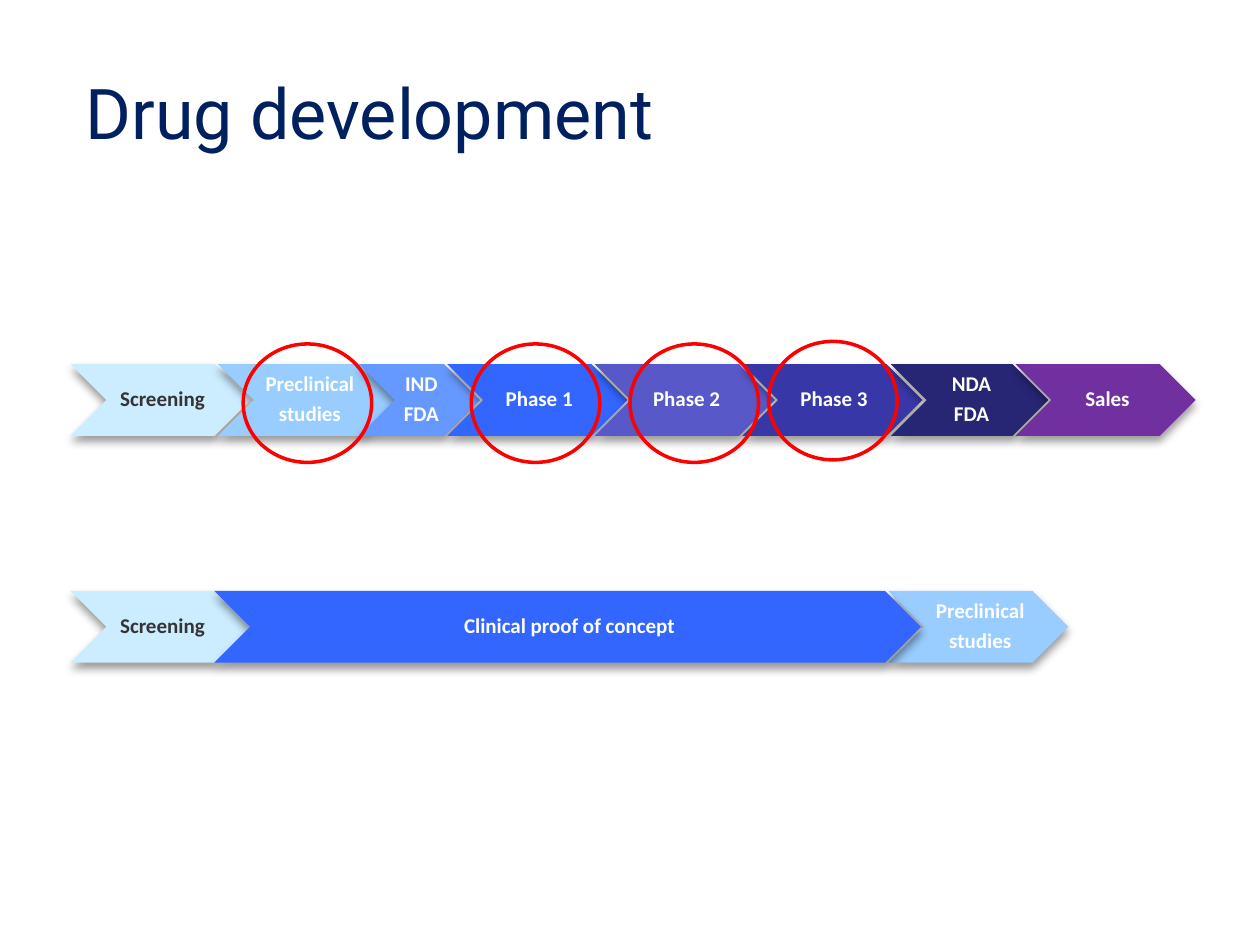
from dataclasses import dataclass

from lxml.etree import SubElement
from pptx import Presentation
from pptx.dml.color import RGBColor
from pptx.enum.shapes import MSO_SHAPE
from pptx.enum.text import MSO_ANCHOR, MSO_AUTO_SIZE, PP_ALIGN
from pptx.oxml.ns import qn
from pptx.shapes.autoshape import Shape
from pptx.slide import Slide
from pptx.util import Inches, Pt

COLORS = {
    "title": "002060", "dark": "343434", "white": "FFFFFF", "ring": "FF0000",
    "ice": "CCECFF", "sky": "99CCFF", "azure": "6699FF", "blue": "3366FF",
    "violet": "5858C8", "indigo": "3737A7", "navy": "262674",
    "purple": "7030A0", "shadow": "000000",
}
HEIGHT = 0.57


@dataclass
class Step:
    left: float
    lines: tuple[str, ...]
    fill: str
    width: float = 1.43
    ink: str = "white"


@dataclass
class Ring:
    left: float
    top: float = 2.73


@dataclass
class Row:
    top: float
    steps: tuple[Step, ...]


ROWS = (
    Row(2.89, (
        Step(0.56, ("Screening",), "ice", ink="dark"),
        Step(1.73, ("Preclinical", "studies"), "sky"),
        Step(2.85, ("IND", "FDA"), "azure", 0.96),
        Step(3.55, ("Phase 1",), "blue"),
        Step(4.72, ("Phase 2",), "violet"),
        Step(5.89, ("Phase 3",), "indigo"),
        Step(7.07, ("NDA", "FDA"), "navy", 1.25),
        Step(8.06, ("Sales",), "purple"),
    )),
    Row(4.69, (
        Step(0.56, ("Screening",), "ice", ink="dark"),
        Step(7.05, ("Preclinical", "studies"), "sky"),
        Step(1.7, ("Clinical proof of concept",), "blue", 5.61),
    )),
)
RINGS = (Ring(1.93), Ring(3.74), Ring(5), Ring(6.1, 2.71))


def color(name: str) -> RGBColor:
    return RGBColor.from_string(COLORS[name])


def add_title(slide: Slide, text: str) -> None:
    title = slide.shapes.title
    title.left, title.top = Inches(0.58), Inches(0.5)
    title.width, title.height = Inches(8.83), Inches(1.18)
    frame = title.text_frame
    frame.auto_size = MSO_AUTO_SIZE.NONE
    frame.vertical_anchor = MSO_ANCHOR.TOP
    para = frame.paragraphs[0]
    para.alignment = PP_ALIGN.LEFT
    run = para.add_run()
    run.text = text
    run.font.name = "Roboto"
    run.font.size = Pt(40)
    run.font.color.rgb = color("title")


def add_shadow(shape: Shape) -> None:
    shape.shadow.inherit = False
    effects = shape._element.spPr.find(qn("a:effectLst"))
    outer = SubElement(effects, qn("a:outerShdw"), blurRad=str(Pt(5.2)),
                       dist=str(Pt(3)), dir="5400000", rotWithShape="0")
    tone = SubElement(outer, qn("a:srgbClr"), val=COLORS["shadow"])
    SubElement(tone, qn("a:alpha"), val="40000")


def add_step(slide: Slide, step: Step, top: float) -> None:
    shape = slide.shapes.add_shape(
        MSO_SHAPE.CHEVRON, Inches(step.left), Inches(top),
        Inches(step.width), Inches(HEIGHT))
    shape.fill.solid()
    shape.fill.fore_color.rgb = color(step.fill)
    shape.line.fill.background()
    add_shadow(shape)
    frame = shape.text_frame
    frame.word_wrap = True
    frame.vertical_anchor = MSO_ANCHOR.MIDDLE
    frame.margin_left = Inches(0.05)
    frame.margin_right = frame.margin_top = frame.margin_bottom = Inches(0.02)
    for index, line in enumerate(step.lines):
        para = frame.add_paragraph() if index else frame.paragraphs[0]
        para.alignment = PP_ALIGN.CENTER
        para.line_spacing = 0.9
        para.space_after = Pt(4.2)
        run = para.add_run()
        run.text = line
        run.font.name = "Calibri"
        run.font.size = Pt(12)
        run.font.bold = True
        run.font.color.rgb = color(step.ink)


def add_ring(slide: Slide, ring: Ring) -> None:
    shape = slide.shapes.add_shape(
        MSO_SHAPE.OVAL, Inches(ring.left), Inches(ring.top),
        Inches(1.02), Inches(0.94))
    shape.shadow.inherit = False
    shape.fill.background()
    shape.line.color.rgb = color("ring")
    shape.line.width = Pt(2)


def main() -> None:
    deck = Presentation()
    deck.slide_width, deck.slide_height = Inches(10), Inches(7.5)
    slide = deck.slides.add_slide(deck.slide_layouts[5])
    add_title(slide, "Drug development")
    for row in ROWS:
        for step in row.steps:
            add_step(slide, step, row.top)
    for ring in RINGS:
        add_ring(slide, ring)
    deck.save("out.pptx")


if __name__ == "__main__":
    main()
